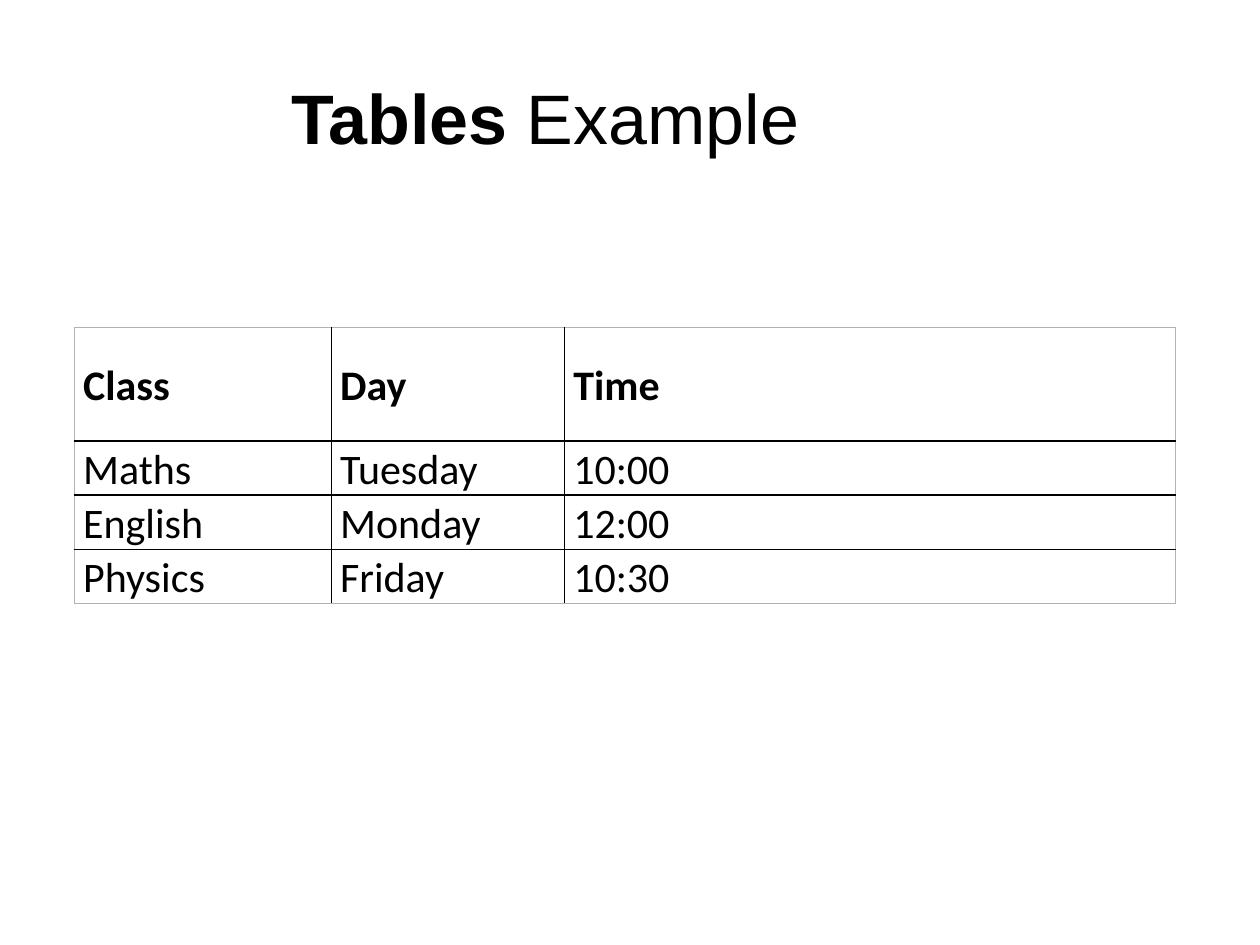
from lxml.etree import SubElement
from pptx import Presentation
from pptx.dml.color import RGBColor
from pptx.enum.text import MSO_ANCHOR as Anchor, PP_ALIGN as Align
from pptx.oxml.ns import qn
from pptx.util import Inches, Pt

BLACK, GRAY, WHITE = "000000", "B2B2B2", "FFFFFF"


def add_run(paragraph, text, font="Calibri", size=24, bold=False, color=BLACK):
    run = paragraph.add_run()
    run.text = text
    run.font.name = font
    run.font.size = Pt(size)
    run.font.bold = bold
    run.font.color.rgb = RGBColor.from_string(color)


def add_border(cell, side, color, width=1):
    """Draw one cell edge; side is L, R, T or B."""
    line = SubElement(cell._tc.get_or_add_tcPr(), qn(f"a:ln{side}"), w=str(Pt(width)))
    fill = SubElement(line, qn("a:solidFill"))
    SubElement(fill, qn("a:srgbClr"), val=color)


presentation = Presentation()
presentation.slide_width = Inches(10)
presentation.slide_height = Inches(7.5)
slide = presentation.slides.add_slide(presentation.slide_layouts[6])

title = slide.shapes.add_textbox(Inches(0.5), Inches(0.3), Inches(7.65), Inches(1.25))
title.text_frame.word_wrap = True
title.text_frame.vertical_anchor = Anchor.MIDDLE
heading = title.text_frame.paragraphs[0]
heading.alignment = Align.CENTER
add_run(heading, "Tables", font="Arial", size=40, bold=True)
add_run(heading, " Example", font="Arial", size=40)

timetable = [
    ("Class", "Day", "Time"),
    ("Maths", "Tuesday", "10:00"),
    ("English", "Monday", "12:00"),
    ("Physics", "Friday", "10:30"),
]
column_widths = [2.04, 1.85, 4.85]
row_heights = [0.9, 0.43, 0.43, 0.43]
last_row, last_column = len(row_heights) - 1, len(column_widths) - 1

table = slide.shapes.add_table(
    len(row_heights), len(column_widths), Inches(0.59), Inches(2.6),
    Inches(sum(column_widths)), Inches(sum(row_heights))).table
table.horz_banding = False
for column, width in zip(table.columns, column_widths):
    column.width = Inches(width)
for row, height in zip(table.rows, row_heights):
    row.height = Inches(height)

for r, entries in enumerate(timetable):
    for c, text in enumerate(entries):
        cell = table.cell(r, c)
        outer_edges = {"L": c == 0, "R": c == last_column, "T": r == 0, "B": r == last_row}
        for side, is_outer in outer_edges.items():
            add_border(cell, side, GRAY if is_outer else BLACK)
        cell.fill.solid()
        cell.fill.fore_color.rgb = RGBColor.from_string(WHITE)
        cell.margin_left = cell.margin_right = Inches(0.07)
        cell.margin_top = cell.margin_bottom = 0
        cell.vertical_anchor = Anchor.MIDDLE
        paragraph = cell.text_frame.paragraphs[0]
        paragraph.line_spacing = 1.07
        add_run(paragraph, text, bold=r == 0)

presentation.save("out.pptx")
